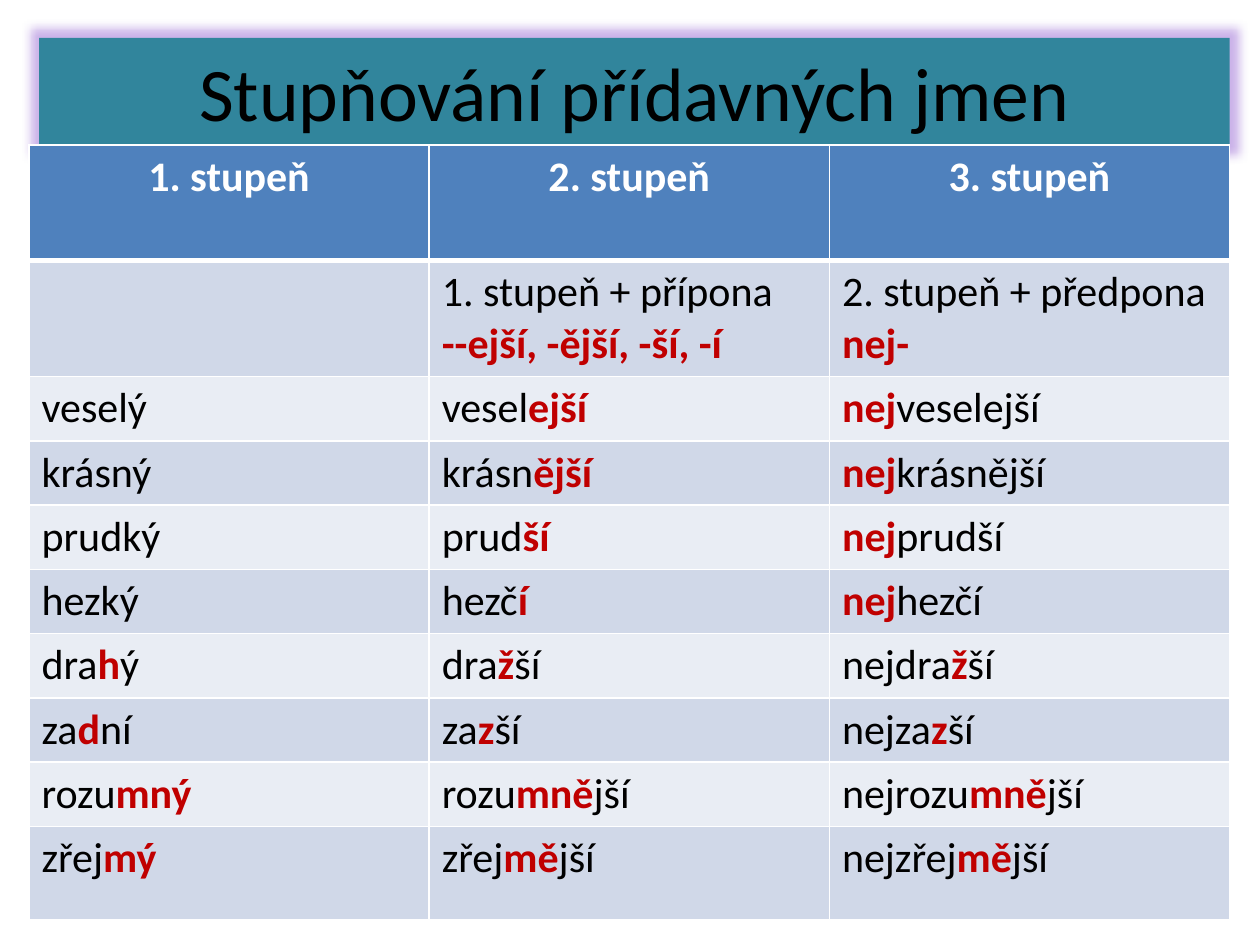
from lxml.etree import SubElement
from pptx import Presentation
from pptx.dml.color import RGBColor
from pptx.enum.text import MSO_ANCHOR, PP_ALIGN
from pptx.oxml.ns import qn
from pptx.util import Inches, Pt

COLORS = {
    "title": "31859C",
    "glow": "7F43C9",
    "header": "4F81BD",
    "dark_band": "D0D8E8",
    "light_band": "E9EDF4",
    "border": "FFFFFF",
    "header_text": "FFFFFF",
    "text": "000000",
    "emphasis": "C00000",
}
FONT = "Calibri"
HEADINGS = ["1. stupeň", "2. stupeň", "3. stupeň"]
COMPARISONS = [
    ["", "1. stupeň + přípona\n*--ejší, -ější, -ší, -í*", "2. stupeň + předpona *nej-*"],
    ["veselý", "vesel*ejší*", "*nej*veselejší"],
    ["krásný", "krásn*ější*", "*nej*krásnější"],
    ["prudký", "prud*ší*", "*nej*prudší"],
    ["hezký", "hezč*í*", "*nej*hezčí"],
    ["dra*h*ý", "dra*ž*ší", "nejdra*ž*ší"],
    ["za*d*ní", "za*z*ší", "nejza*z*ší"],
    ["rozu*mný*", "rozu*mně*jší", "nejrozu*mně*jší"],
    ["zřej*mý*", "zřej*mě*jší", "nejzřej*mě*jší"],
]
ROW_HEIGHTS = [0.92, 0.92] + [0.51] * 7 + [0.74]


def rgb(name):
    return RGBColor.from_string(COLORS[name])


def style(font, size, color, bold=False):
    font.name = FONT
    font.size = Pt(size)
    font.bold = bold
    font.color.rgb = rgb(color)


def add_glow(shape, radius, opacity):
    effects = SubElement(shape._element.spPr, qn("a:effectLst"))
    glow = SubElement(effects, qn("a:glow"), rad=str(Pt(radius)))
    color = SubElement(glow, qn("a:srgbClr"), val=COLORS["glow"])
    SubElement(color, qn("a:alpha"), val=str(opacity * 1000))


def set_borders(cell, bottom_width):
    properties = cell._tc.get_or_add_tcPr()
    widths = {"a:lnL": 1, "a:lnR": 1, "a:lnT": 1, "a:lnB": bottom_width}
    for position, (side, width) in enumerate(widths.items()):
        line = SubElement(properties, qn(side), w=str(Pt(width)))
        fill = SubElement(line, qn("a:solidFill"))
        SubElement(fill, qn("a:srgbClr"), val=COLORS["border"])
        properties.insert(position, line)


def write_marked(paragraph, marked):
    for line_number, line in enumerate(marked.split("\n")):
        if line_number:
            paragraph.add_line_break()
        for index, part in enumerate(line.split("*")):
            if part:
                run = paragraph.add_run()
                run.text = part
                emphasized = index % 2 == 1
                style(run.font, 24, "emphasis" if emphasized else "text", emphasized)


def place_title(slide, left, top, width, height):
    title = slide.shapes.title
    title.left, title.top, title.width, title.height = left, top, width, height
    title.fill.solid()
    title.fill.fore_color.rgb = rgb("title")
    add_glow(title, 11, 40)
    frame = title.text_frame
    frame.text = "Stupňování přídavných jmen"
    frame.vertical_anchor = MSO_ANCHOR.MIDDLE
    heading = frame.paragraphs[0]
    heading.alignment = PP_ALIGN.CENTER
    style(heading.runs[0].font, 43.2, "text")


def place_comparisons(slide, left, top, width, height):
    rows = [HEADINGS] + COMPARISONS
    table = slide.shapes.add_table(len(rows), len(HEADINGS), left, top, width, height).table
    for row, row_height in zip(table.rows, ROW_HEIGHTS):
        row.height = Inches(row_height)
    for row_number, texts in enumerate(rows):
        is_header = row_number == 0
        band = "header" if is_header else "dark_band" if row_number % 2 else "light_band"
        for column, text in enumerate(texts):
            cell = table.cell(row_number, column)
            cell.fill.solid()
            cell.fill.fore_color.rgb = rgb(band)
            set_borders(cell, 3 if is_header else 1)
            paragraph = cell.text_frame.paragraphs[0]
            paragraph.font.size = Pt(24)
            if is_header:
                paragraph.text = text
                paragraph.alignment = PP_ALIGN.CENTER
                style(paragraph.runs[0].font, 24, "header_text", True)
            else:
                write_marked(paragraph, text)


def main():
    presentation = Presentation()
    presentation.slide_width = Inches(10)
    presentation.slide_height = Inches(7.5)
    slide = presentation.slides.add_slide(presentation.slide_layouts[5])
    place_title(slide, Inches(0.31), Inches(0.3), Inches(9.45), Inches(0.85))
    place_comparisons(slide, Inches(0.23), Inches(1.15), Inches(9.53), Inches(6.14))
    presentation.save("out.pptx")


if __name__ == "__main__":
    main()
